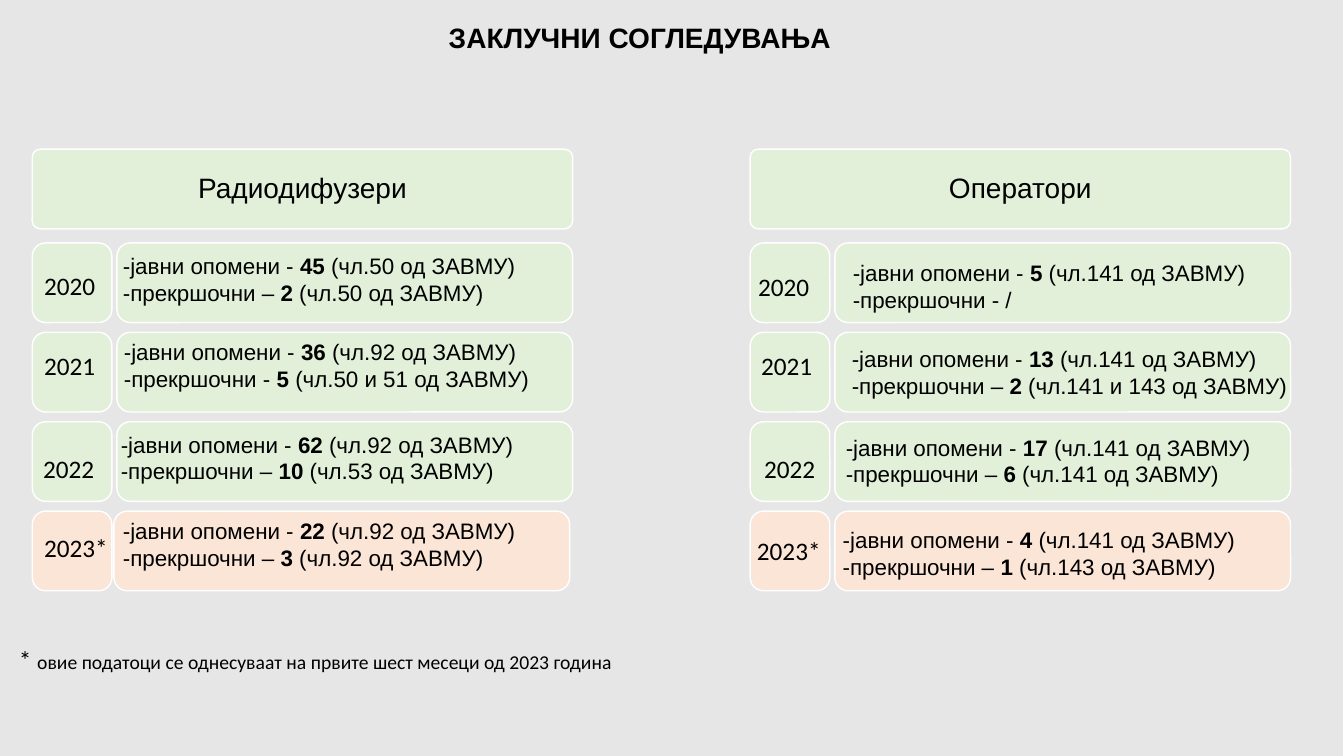
"""Builds the slide of concluding remarks with two columns of yearly measures."""
from lxml import etree
from pptx import Presentation, util as u
from pptx.dml.color import RGBColor
from pptx.enum import shapes, text

W, H = 13.33, 7.5
GREY, GREEN, PEACH, WHITE, BLACK = "E7E6E6", "E2F0D9", "FBE5D6", "FFFFFF", "000000"
TITLE = "ЗАКЛУЧНИ СОГЛЕДУВАЊА"
FOOTNOTE = [("* ", 18), ("овие податоци се однесуваат на првите шест месеци од 2023 година", 14)]
WARNINGS = "-јавни опомени - "
YEARS = [("2020", GREEN), ("2021", GREEN), ("2022", GREEN), ("2023*", PEACH)]

# Each row: year offset, detail offset, detail box shift, warnings, their article,
# misdemeanour label, misdemeanours, their article.
COLUMNS = [
    ("Радиодифузери", 0.32, [
        ((0.02, 0.22), (-0.04, 0.04), 0, "45", "чл.50", "-прекршочни – ", "2", "чл.50"),
        ((0.02, 0.13), (-0.03, 0.01), 0, "36", "чл.92", "-прекршочни - ", "5", "чл.50 и 51"),
        ((0.01, 0.26), (-0.06, 0.04), 0, "62", "чл.92", "-прекршочни – ", "10", "чл.53"),
        ((0.02, 0.16), (-0.04, 0.01), -0.03, "22", "чл.92", "-прекршочни – ", "3", "чл.92"),
    ]),
    ("Оператори", 7.44, [
        ((-0.02, 0.23), (0.08, 0.11), 0, "5", "чл.141", "-прекршочни - /", "", ""),
        ((0.01, 0.13), (0.07, 0.08), 0, "13", "чл.141", "-прекршочни – ", "2", "чл.141 и 143"),
        ((0.04, 0.26), (0.01, 0.07), 0, "17", "чл.141", "-прекршочни – ", "6", "чл.141"),
        ((-0.03, 0.19), (-0.02, 0.1), 0, "4", "чл.141", "-прекршочни – ", "1", "чл.143"),
    ]),
]
HEAD_TOP, ROW_TOP, ROW_STEP = 1.48, 2.41, 0.887
CELL, DETAIL_X, DETAIL_W, COLUMN_W = 0.79, 0.84, 4.52, 5.36


def color(value):
    return RGBColor.from_string(value)


def add_box(s, x, y, w, h, fill, line=WHITE, radius=None):
    kind = shapes.MSO_SHAPE.RECTANGLE if radius is None else shapes.MSO_SHAPE.ROUNDED_RECTANGLE
    sp = s.shapes.add_shape(kind, *map(u.Inches, (x, y, w, h)))
    if radius is not None:
        sp.adjustments[0] = radius
    sp.shadow.inherit = False
    sp.fill.solid()
    sp.fill.fore_color.rgb = color(fill)
    sp.line.color.rgb = color(line)
    sp.line.width = u.Pt(1)
    return sp


def write(tf, paragraphs, font="Arial", align=None, spacing=None):
    tf.word_wrap = True
    for i, runs in enumerate(paragraphs):
        p = tf.paragraphs[0] if i == 0 else tf.add_paragraph()
        p.alignment = align
        p.line_spacing = spacing
        for words, size, bold in runs:
            r = p.add_run()
            r.text = words
            r.font.name, r.font.size, r.font.bold = font, u.Pt(size), bold
            r.font.color.rgb = color(BLACK)


def add_text(s, x, y, w, h, paragraphs, **style):
    tf = s.shapes.add_textbox(*map(u.Inches, (x, y, w, h))).text_frame
    write(tf, paragraphs, **style)
    return tf


def measure(label, count, article):
    runs = [(label, 16, False)]
    if count:
        runs += [(count, 16, True), (f" ({article} од ЗАВМУ)", 16, False)]
    return runs


def add_column(s, heading, left, rows):
    head = add_box(s, left, HEAD_TOP, COLUMN_W, CELL, GREEN, radius=0.1)
    head.text_frame.vertical_anchor = text.MSO_ANCHOR.MIDDLE
    write(head.text_frame, [[(heading, 20, False)]], align=text.PP_ALIGN.CENTER, spacing=0.9)
    for i, ((year, fill), row) in enumerate(zip(YEARS, rows)):
        (yx, yy), (dx, dy), shift, warned, article, label, fined, fine_article = row
        top, detail = ROW_TOP + i * ROW_STEP, left + DETAIL_X
        add_box(s, left, top, CELL, CELL, fill, radius=0.167)
        add_box(s, detail + shift, top, DETAIL_W, CELL, fill, radius=0.167)
        lines = [measure(WARNINGS, warned, article), measure(label, fined, fine_article)]
        add_text(s, detail + dx, top + dy, 4.85, 0.64, lines, align=text.PP_ALIGN.JUSTIFY)
        tf = add_text(s, left + yx, top + yy, 0.87, 0.4, [[(year, 18, False)]], font="Calibri")
        tf.word_wrap = False


def main():
    prs = Presentation()
    prs.slide_width, prs.slide_height = u.Inches(W), u.Inches(H)
    s = prs.slides.add_slide(prs.slide_layouts[6])
    add_box(s, -0.02, 0, W, H, GREY, line=GREY)
    add_text(s, 1.89, 0.22, 8.91, 0.39, [[(TITLE, 20, True)]],
             align=text.PP_ALIGN.CENTER, spacing=0.8)
    for column in COLUMNS:
        add_column(s, *column)
    note = [(words, size, False) for words, size in FOOTNOTE]
    add_text(s, 0.09, 6.34, 6.26, 0.4, [note], font="Calibri")
    prs.save("out.pptx")


if __name__ == "__main__":
    main()
